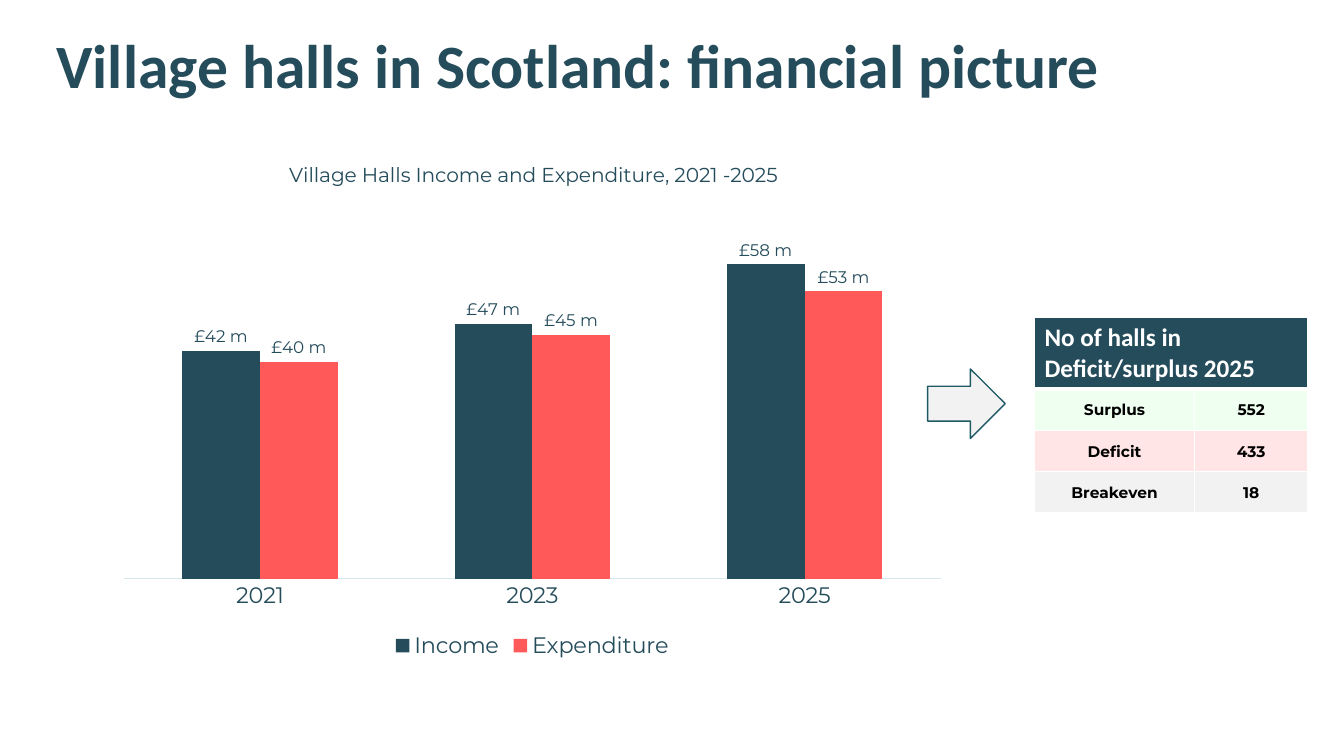
from lxml.etree import SubElement
from pptx import Presentation
from pptx.chart.data import CategoryChartData
from pptx.dml.color import RGBColor
from pptx.enum.chart import XL_CHART_TYPE as ChartType, XL_LABEL_POSITION as LabelPos
from pptx.enum.chart import XL_LEGEND_POSITION as LegendPos, XL_TICK_MARK as TickMark
from pptx.enum.shapes import MSO_SHAPE as Preset
from pptx.enum.text import MSO_ANCHOR as Anchor, PP_ALIGN as Align
from pptx.oxml import parse_xml
from pptx.oxml.ns import nsdecls, qn
from pptx.util import Inches, Pt

COLOURS = {
    "navy": "254C5B", "coral": "FF5959", "axis": "D6E8EE", "teal": "1E5964",
    "mint": "EFFFF0", "pink": "FFE5E5", "grey": "F2F2F2",
    "white": "FFFFFF", "black": "000000",
}
HEADING, BODY = "Calibri", "Montserrat"
MILLION = 1_000_000
MONEY_FORMAT = '"£"#,##0,,\\ "m"'


def colour(name):
    return RGBColor.from_string(COLOURS[name])


def style_font(font, size, name=BODY, tone="navy", bold=False):
    font.size, font.name, font.bold = Pt(size), name, bold
    font.color.rgb = colour(tone)


def write(frame, text, align=Align.LEFT, spacing=None, **font_format):
    frame.word_wrap = True
    paragraph = frame.paragraphs[0]
    paragraph.alignment = align
    paragraph.line_spacing = spacing
    run = paragraph.add_run()
    run.text = text
    style_font(run.font, **font_format)


def place(part, index, x, y, size=None):
    """Give a chart part a fixed position as fractions of the chart."""
    for old in part.findall(qn("c:layout")):
        part.remove(old)
    settings = {"xMode": "edge", "yMode": "edge", "x": x, "y": y}
    if size:
        settings = {"layoutTarget": "inner", **settings, "w": size[0], "h": size[1]}
    layout = parse_xml(f"<c:layout {nsdecls('c')}/>")
    manual = SubElement(layout, qn("c:manualLayout"))
    for tag, value in settings.items():
        SubElement(manual, qn(f"c:{tag}")).set("val", str(value))
    part.insert(index, layout)


def add_borders(cell, bottom):
    """Draw white borders around a table cell."""
    for side, width in {"L": 1, "R": 1, "T": 1, "B": bottom}.items():
        cell._tc.get_or_add_tcPr().append(parse_xml(
            f'<a:ln{side} {nsdecls("a")} w="{Pt(width)}"><a:solidFill>'
            f'<a:srgbClr val="{COLOURS["white"]}"/></a:solidFill></a:ln{side}>'))


class HallsSlide:
    """Builds the parts of one slide in a shared style."""

    def __init__(self, deck):
        self.slide = deck.slides.add_slide(deck.slide_layouts[5])
        self.shapes = self.slide.shapes

    def title(self, text, box):
        heading = self.shapes.title
        heading.left, heading.top, heading.width, heading.height = map(Inches, box)
        heading.text_frame.vertical_anchor = Anchor.MIDDLE
        write(heading.text_frame, text, spacing=0.9, size=44, name=HEADING, bold=True)

    def column_chart(self, caption, years, amounts, tones, box):
        data = CategoryChartData(number_format=MONEY_FORMAT)
        data.categories = years
        for name, millions in amounts.items():
            data.add_series(name, [value * MILLION for value in millions])
        chart = self.shapes.add_chart(
            ChartType.COLUMN_CLUSTERED, *map(Inches, box), data).chart
        style_font(chart.font, 12)

        write(chart.chart_title.text_frame, caption, align=Align.CENTER, size=14.4)
        place(chart.chart_title._element, 1, 0.21, 0.04)
        place(chart._chartSpace.chart.plotArea, 0, 0.02, 0.12, (0.96, 0.72))

        chart.has_legend = True
        chart.legend.position = LegendPos.BOTTOM
        chart.legend.include_in_layout = False
        style_font(chart.legend.font, 16)

        year_axis, money_axis = chart.category_axis, chart.value_axis
        year_axis.major_tick_mark = TickMark.NONE
        year_axis.format.line.color.rgb = colour("axis")
        year_axis.format.line.width = Pt(0.75)
        style_font(year_axis.tick_labels.font, 16)
        money_axis.visible = False
        money_axis.has_major_gridlines = False
        money_axis.minimum_scale, money_axis.maximum_scale = 0, 70 * MILLION

        plot = chart.plots[0]
        plot.gap_width, plot.overlap, plot.vary_by_categories = 150, 0, False
        for series, tone in zip(plot.series, tones):
            series.format.fill.solid()
            series.format.fill.fore_color.rgb = colour(tone)
            labels = series.data_labels
            labels.show_value = True
            labels.position = LabelPos.OUTSIDE_END
            labels.number_format, labels.number_format_is_linked = MONEY_FORMAT, False
            style_font(labels.font, 12)

    def cell(self, cell, fill, bottom=1):
        add_borders(cell, bottom)
        cell.fill.solid()
        cell.fill.fore_color.rgb = colour(fill)

    def table(self, heading, counts, widths, heights, corner):
        grid = self.shapes.add_table(
            len(counts) + 1, len(widths), *map(Inches, corner),
            Inches(sum(widths)), Inches(sum(heights))).table
        for column, width in zip(grid.columns, widths):
            column.width = Inches(width)
        for row, height in zip(grid.rows, heights):
            row.height = Inches(height)

        header = grid.cell(0, 0)
        header.merge(grid.cell(0, len(widths) - 1))
        for part in grid.rows[0].cells:
            self.cell(part, "navy", bottom=3)
        write(header.text_frame, heading, size=18, name=HEADING, tone="white", bold=True)

        for row, (*texts, fill) in enumerate(counts, start=1):
            for column, text in enumerate(texts):
                cell = grid.cell(row, column)
                self.cell(cell, fill)
                cell.vertical_anchor = Anchor.MIDDLE
                cell.margin_left = cell.margin_right = cell.margin_top = Inches(0.01)
                cell.margin_bottom = 0
                write(cell.text_frame, text, align=Align.CENTER,
                      size=11, tone="black", bold=True)

    def arrow(self, box):
        pointer = self.shapes.add_shape(Preset.RIGHT_ARROW, *map(Inches, box))
        pointer.shadow.inherit = False
        pointer.fill.solid()
        pointer.fill.fore_color.rgb = colour("grey")
        pointer.line.color.rgb = colour("teal")
        pointer.line.width = Pt(1)


def main():
    deck = Presentation()
    deck.slide_width, deck.slide_height = Inches(13.33), Inches(7.5)
    halls = HallsSlide(deck)
    halls.title("Village halls in Scotland: financial picture", (0.46, 0.24, 10.98, 0.88))
    halls.column_chart(
        "Village Halls Income and Expenditure, 2021 -2025",
        ["2021", "2023", "2025"],
        {"Income": [42, 47, 58], "Expenditure": [40, 45, 53]},
        ["navy", "coral"], (1.06, 1.35, 8.44, 5.23))
    halls.table(
        "No of halls in Deficit/surplus 2025",
        [("Surplus", "552", "mint"), ("Deficit", "433", "pink"), ("Breakeven", "18", "grey")],
        [1.59, 1.12], [0.69, 0.41, 0.41, 0.41], (10.26, 3.15))
    halls.arrow((9.2, 3.66, 0.77, 0.69))
    deck.save("out.pptx")


if __name__ == "__main__":
    main()
